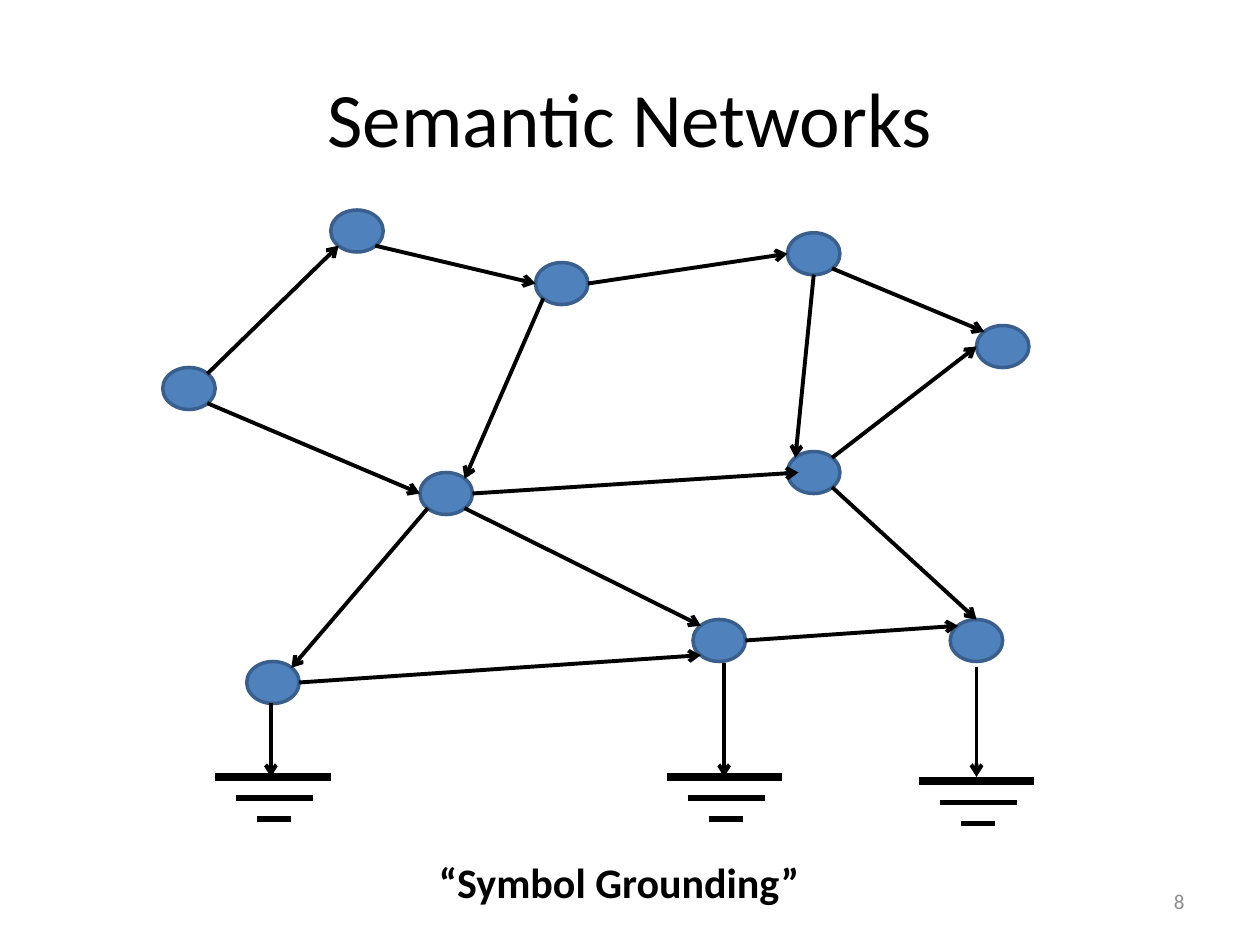
"""Build the semantic networks slide with its grounded symbols."""
from dataclasses import dataclass
from typing import NamedTuple

from lxml import etree
from pptx import Presentation
from pptx.dml.color import RGBColor
from pptx.enum.shapes import MSO_CONNECTOR, MSO_SHAPE
from pptx.enum.text import MSO_ANCHOR, PP_ALIGN
from pptx.oxml.ns import qn
from pptx.util import Pt

STRAIGHT = MSO_CONNECTOR.STRAIGHT
OVAL = MSO_SHAPE.OVAL
MIDDLE, TOP = MSO_ANCHOR.MIDDLE, MSO_ANCHOR.TOP
CENTER, RIGHT = PP_ALIGN.CENTER, PP_ALIGN.RIGHT
TITLE_ONLY = 5


@dataclass(frozen=True)
class Theme:
    font: str = "Calibri"
    ink: RGBColor = RGBColor(0x00, 0x00, 0x00)
    muted: RGBColor = RGBColor(0x8C, 0x8C, 0x8C)
    node_fill: RGBColor = RGBColor(0x4F, 0x81, 0xBD)
    node_line: RGBColor = RGBColor(0x3A, 0x5F, 0x8C)
    title_size: float = 44
    caption_size: float = 24
    number_size: float = 12
    node_weight: float = 2
    arrow_weight: float = 2.25


class Point(NamedTuple):
    x: float
    y: float


class Box(NamedTuple):
    left: float
    top: float
    width: float
    height: float


class Edge(NamedTuple):
    source: str
    source_site: str
    target: str
    target_site: str


class Ground(NamedTuple):
    left: float
    top: float
    stem_x: float
    stem_top: float


class Bar(NamedTuple):
    inset: float
    width: float
    weight: float


THEME = Theme()
NODE_WIDTH, NODE_HEIGHT = 30, 24
STEM_BOTTOM, BAR_GAP = 444, 12

NODES = {
    "start": Point(93, 210),
    "upper": Point(189, 120),
    "hub": Point(240, 270),
    "right ground": Point(543, 354),
    "end": Point(558, 186),
    "left ground": Point(141, 378),
    "middle ground": Point(396, 354),
    "bridge": Point(306, 150),
    "junction": Point(450, 258),
    "peak": Point(450, 133),
}

SITES = {
    "top": Point(0.5, 0),
    "bottom": Point(0.5, 1),
    "left": Point(0, 0.5),
    "right": Point(1, 0.5),
    "top left": Point(0.15, 0.15),
    "top right": Point(0.85, 0.15),
    "bottom left": Point(0.15, 0.85),
    "bottom right": Point(0.85, 0.85),
    "inner left": Point(0.21, 0.5),
}

EDGES = [
    Edge("upper", "bottom right", "bridge", "left"),
    Edge("hub", "bottom left", "left ground", "top right"),
    Edge("start", "bottom right", "hub", "left"),
    Edge("left ground", "right", "middle ground", "bottom left"),
    Edge("hub", "bottom right", "middle ground", "top left"),
    Edge("junction", "bottom right", "right ground", "top"),
    Edge("middle ground", "right", "right ground", "top left"),
    Edge("hub", "right", "junction", "inner left"),
    Edge("bridge", "right", "peak", "left"),
    Edge("junction", "top right", "end", "left"),
    Edge("bridge", "bottom left", "hub", "top right"),
    Edge("start", "top right", "upper", "bottom left"),
    Edge("peak", "bottom right", "end", "top left"),
    Edge("peak", "bottom", "junction", "top left"),
]

GROUNDS = [
    Ground(123, 444, 154.8, 402),
    Ground(381, 444, 413.8, 379),
    Ground(525, 446.4, 558, 381),
]
BARS = [Bar(0, 66, 4.5), Bar(12, 44, 3), Bar(24, 19.5, 3)]


def place(shape, box: Box) -> None:
    """Move and size a shape to a box in points."""
    shape.left, shape.top, shape.width, shape.height = map(Pt, box)


def write(shape, text: str, size: float, color: RGBColor, alignment, anchor, bold=False) -> None:
    """Set and format the only paragraph of a shape."""
    frame = shape.text_frame
    frame.text = text
    frame.word_wrap = True
    frame.vertical_anchor = anchor
    paragraph = frame.paragraphs[0]
    paragraph.alignment = alignment
    font = paragraph.runs[0].font
    font.name, font.size, font.bold = THEME.font, Pt(size), bold
    font.color.rgb = color


def draw_node(slide, corner: Point) -> None:
    """Draw one network node."""
    shape = slide.shapes.add_shape(OVAL, *map(Pt, (*corner, NODE_WIDTH, NODE_HEIGHT)))
    shape.shadow.inherit = False
    shape.fill.solid()
    shape.fill.fore_color.rgb = THEME.node_fill
    shape.line.color.rgb = THEME.node_line
    shape.line.width = Pt(THEME.node_weight)


def draw_line(slide, start: Point, end: Point, weight: float, arrow: bool = False) -> None:
    """Draw a straight line, with an open arrowhead at its end if asked."""
    connector = slide.shapes.add_connector(STRAIGHT, *map(Pt, (*start, *end)))
    connector.line.color.rgb = THEME.ink
    connector.line.width = Pt(weight)
    properties = connector.element.spPr
    if arrow:
        etree.SubElement(properties.find(qn("a:ln")), qn("a:tailEnd"), type="arrow")
    etree.SubElement(properties, qn("a:effectLst"))


def site_point(node: str, site: str) -> Point:
    """Return the position of a connection site on a node."""
    corner, share = NODES[node], SITES[site]
    return Point(corner.x + share.x * NODE_WIDTH, corner.y + share.y * NODE_HEIGHT)


def draw_edge(slide, edge: Edge) -> None:
    """Draw the arrow between two nodes."""
    start = site_point(edge.source, edge.source_site)
    end = site_point(edge.target, edge.target_site)
    draw_line(slide, start, end, THEME.arrow_weight, arrow=True)


def draw_ground(slide, ground: Ground) -> None:
    """Draw a ground symbol and the arrow that leads to it."""
    stem_start = Point(ground.stem_x, ground.stem_top)
    stem_end = Point(ground.stem_x, STEM_BOTTOM)
    draw_line(slide, stem_start, stem_end, THEME.arrow_weight, arrow=True)
    for index, bar in enumerate(BARS):
        start = Point(ground.left + bar.inset, ground.top + index * BAR_GAP)
        draw_line(slide, start, Point(start.x + bar.width, start.y), bar.weight)


def add_label(slide, box: Box, *style, bold: bool = False) -> None:
    """Add a text box with one formatted line."""
    write(slide.shapes.add_textbox(*map(Pt, box)), *style, bold=bold)


def main() -> None:
    """Build and save the presentation."""
    presentation = Presentation()
    presentation.slide_width, presentation.slide_height = Pt(720), Pt(540)
    slide = presentation.slides.add_slide(presentation.slide_layouts[TITLE_ONLY])
    title = slide.shapes.title
    place(title, Box(36, 21.6, 648, 90))
    write(title, "Semantic Networks", THEME.title_size, THEME.ink, CENTER, MIDDLE)
    for corner in NODES.values():
        draw_node(slide, corner)
    for edge in EDGES:
        draw_edge(slide, edge)
    for ground in GROUNDS:
        draw_ground(slide, ground)
    add_label(slide, Box(516, 500.5, 168, 28.8), "8", THEME.number_size, THEME.muted, RIGHT, MIDDLE)
    add_label(slide, Box(119, 486, 469.5, 36), "“Symbol Grounding”",
              THEME.caption_size, THEME.ink, CENTER, TOP, bold=True)
    presentation.save("out.pptx")


if __name__ == "__main__":
    main()
